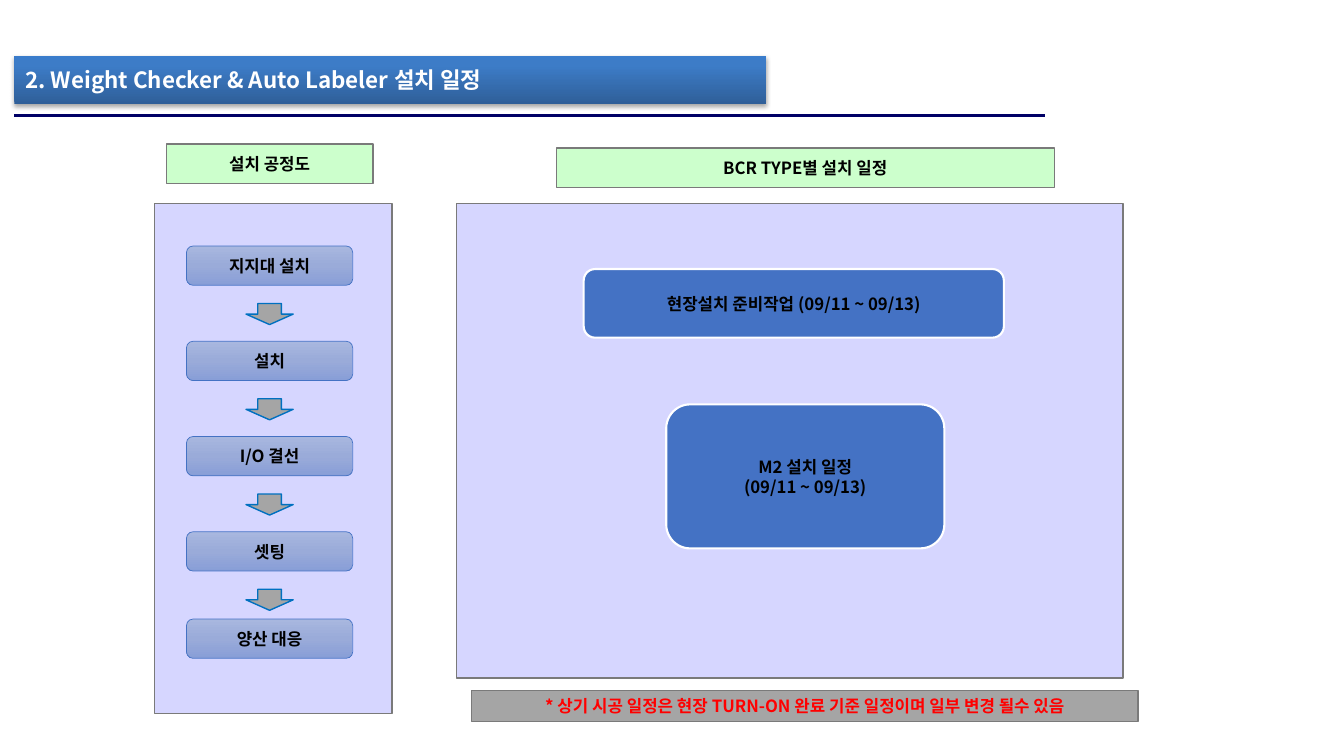
from dataclasses import dataclass
from typing import Optional

from lxml.etree import SubElement as Sub
from pptx import Presentation
from pptx.dml.color import RGBColor as Rgb
from pptx.enum.shapes import MSO_CONNECTOR as Conn, MSO_SHAPE as Geo
from pptx.enum.text import MSO_ANCHOR as Anchor, MSO_AUTO_SIZE as Fit, PP_ALIGN as Align
from pptx.oxml.ns import qn
from pptx.util import Cm, Pt

FONT = "Noto Sans CJK KR"
HUES = {
    "panel": "3333FF", "edge": "7A7A7A", "rule": "000066", "blue": "4472C4",
    "sky": "0070C0", "gray": "A5A5A5", "mint": "CCFFCC", "white": "FFFFFF",
    "black": "000000", "red": "FF0000", "top": "A8B7DF", "mid": "9AABD9",
    "low": "889ED7", "deep": "2F5F99", "lit": "3D7CC7", "crest": "3A7CCB",
}
PILL = ((0, "top"), (50, "mid"), (100, "low"))
BAND = ((0, "deep"), (80, "lit"), (100, "crest"))


@dataclass
class Box:
    left: float
    top: float
    width: float
    height: float
    fill: str = "mint"
    edge: str = "edge"
    weight: float = 1
    text: str = ""
    ink: str = "black"
    geo: Geo = Geo.RECTANGLE
    alpha: Optional[int] = None
    stops: Optional[tuple] = None


def hue(name: str) -> Rgb:
    return Rgb.from_string(HUES[name])


def blend(shape, stops: tuple, angle: int) -> None:
    shape.fill.gradient()
    shape.fill.gradient_angle = angle
    group = shape._element.spPr.find(qn("a:gradFill")).find(qn("a:gsLst"))
    for old in list(group):
        group.remove(old)
    for spot, name in stops:
        stop = Sub(group, qn("a:gs"), pos=str(spot * 1000))
        Sub(stop, qn("a:srgbClr"), val=HUES[name])


def write(shape, text: str, size: float, ink: str, align: Align) -> None:
    frame = shape.text_frame
    frame.text = text
    frame.word_wrap = True
    frame.auto_size = Fit.NONE
    frame.vertical_anchor = Anchor.MIDDLE
    frame.margin_left = frame.margin_right = 0
    frame.margin_top = frame.margin_bottom = Cm(0.13)
    for para in frame.paragraphs:
        para.alignment = align
        for run in para.runs:
            font = run.font
            font.size, font.bold, font.name = Pt(size), True, FONT
            font.color.rgb = hue(ink)
            Sub(run._r.get_or_add_rPr(), qn("a:ea"), typeface=FONT)


def draw(slide, box: Box) -> None:
    shape = slide.shapes.add_shape(
        box.geo, Cm(box.left), Cm(box.top), Cm(box.width), Cm(box.height))
    shape.shadow.inherit = False
    if box.stops:
        blend(shape, box.stops, 270)
    else:
        shape.fill.solid()
        shape.fill.fore_color.rgb = hue(box.fill)
    if box.alpha:
        color = shape._element.spPr.find(qn("a:solidFill"))[0]
        Sub(color, qn("a:alpha"), val=str(box.alpha * 1000))
    shape.line.color.rgb = hue(box.edge)
    shape.line.width = Pt(box.weight)
    if box.text:
        write(shape, box.text, 12, box.ink, Align.CENTER)


def head(slide) -> None:
    title = slide.shapes.title
    title.left, title.top = Cm(0.36), Cm(1.4)
    title.width, title.height = Cm(18.95), Cm(1.22)
    blend(title, BAND, 90)
    write(title, "2. Weight Checker & Auto Labeler 설치 일정", 16, "white", Align.LEFT)
    title.text_frame.margin_left = Cm(0.28)
    glow = Sub(title._element.spPr, qn("a:effectLst"))
    shade = Sub(glow, qn("a:outerShdw"), blurRad=str(Pt(3.1)), dist=str(Pt(1.8)),
                dir="5400000", rotWithShape="0")
    color = Sub(shade, qn("a:srgbClr"), val=HUES["black"])
    Sub(color, qn("a:alpha"), val="35000")

    rule = slide.shapes.add_connector(
        Conn.STRAIGHT, Cm(0.36), Cm(2.9), Cm(26.34), Cm(2.9))
    rule.line.color.rgb = hue("rule")
    rule.line.width = Pt(2.25)
    Sub(rule._element.spPr, qn("a:effectLst"))


def main() -> None:
    deck = Presentation()
    deck.slide_width, deck.slide_height = Cm(33.87), Cm(19.05)
    slide = deck.slides.add_slide(deck.slide_layouts[5])
    head(slide)

    pitch = 2.4
    steps = ("지지대 설치", "설치", "I/O 결선", "셋팅")
    tops = [(6.2 + row * pitch, name) for row, name in enumerate(steps)]
    pills = [
        Box(4.7, top, 4.19, 0.99, edge="blue", weight=0.5, text=name,
            geo=Geo.ROUNDED_RECTANGLE, stops=PILL)
        for top, name in [*tops, (15.6, "양산 대응")]
    ]
    arrows = [
        Box(6.2, 7.65 + row * pitch, 1.19, 0.53, "gray", "sky", geo=Geo.DOWN_ARROW)
        for row in range(len(steps))
    ]
    boxes = [
        Box(11.51, 5.13, 16.79, 11.96, "panel", alpha=20),
        Box(3.89, 5.13, 5.99, 12.85, "panel", alpha=20),
        *pills,
        *arrows,
        Box(4.19, 3.63, 5.21, 0.99, text="설치 공정도"),
        Box(14.02, 3.73, 12.55, 0.99, text="BCR TYPE별 설치 일정"),
        Box(14.71, 6.78, 10.59, 1.73, "blue", "white", 1.5,
            "현장설치 준비작업 (09/11 ~ 09/13)", geo=Geo.ROUNDED_RECTANGLE),
        Box(16.79, 10.19, 7.01, 3.63, "blue", "white", 1.5,
            "M2 설치 일정\n(09/11 ~ 09/13)", geo=Geo.ROUNDED_RECTANGLE),
        Box(11.89, 17.4, 16.79, 0.79, "gray", ink="red",
            text="* 상기 시공 일정은 현장 TURN-ON 완료 기준 일정이며 일부 변경 될수 있음"),
    ]
    for box in boxes:
        draw(slide, box)
    deck.save("out.pptx")


if __name__ == "__main__":
    main()
